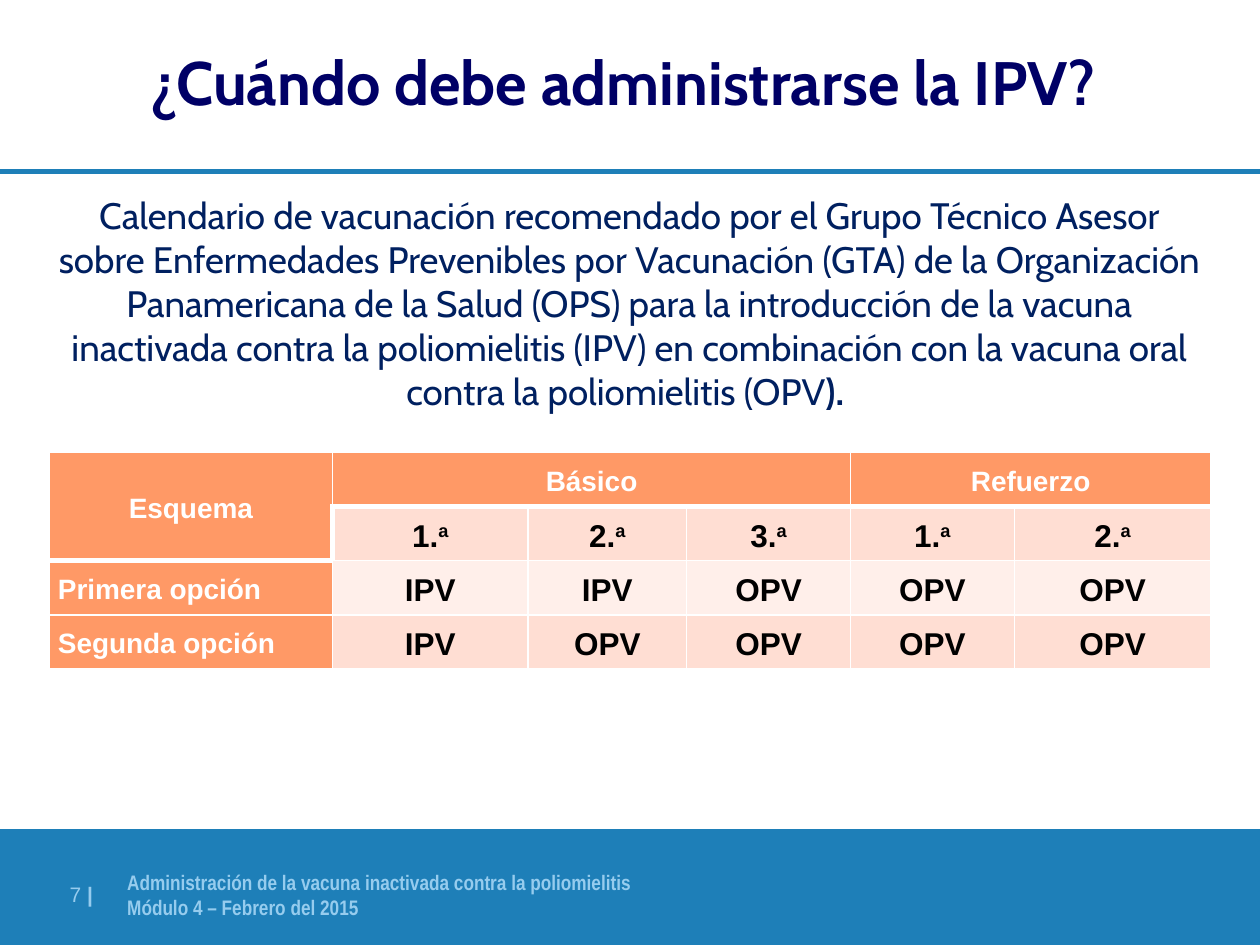
import pptx
import pptx.dml.color
import pptx.enum.shapes
import pptx.enum.text
import pptx.oxml
import pptx.oxml.ns
import pptx.util
from lxml import etree
from pptx.util import Inches

ALIGN = pptx.enum.text.PP_ALIGN
MIDDLE = pptx.enum.text.MSO_ANCHOR.MIDDLE
TOP = pptx.enum.text.MSO_ANCHOR.TOP
BLUE, PALE_BLUE, WHITE, BLACK = "1E7FB8", "96CCEE", "FFFFFF", "000000"
ORANGE, PEACH, LIGHT_PEACH = "FF9966", "FFDED3", "FFEFEA"
NAMESPACE = pptx.oxml.ns.nsdecls("a")


def color(value):
    return pptx.dml.color.RGBColor.from_string(value)


class SlideBuilder:
    """Holds the current slide and draws styled elements on it."""

    def __init__(self, slide):
        self.slide = slide

    def style(self, paragraph, size, font, value, bold=None, align=ALIGN.LEFT):
        paragraph.alignment = align
        paragraph.font.size = pptx.util.Pt(size)
        paragraph.font.name = font
        paragraph.font.color.rgb = color(value)
        if bold is not None:
            paragraph.font.bold = bold

    def rule(self, y, width):
        line = self.slide.shapes.add_connector(
            pptx.enum.shapes.MSO_CONNECTOR.STRAIGHT,
            0, Inches(y), Inches(10), Inches(y))
        line.line.color.rgb = color(BLUE)
        line.line.width = pptx.util.Pt(width)
        etree.SubElement(line._element.spPr, pptx.oxml.ns.qn("a:effectLst"))

    def band(self, *box):
        band = self.slide.shapes.add_shape(
            pptx.enum.shapes.MSO_SHAPE.RECTANGLE, *map(Inches, box))
        band.shadow.inherit = False
        band.fill.solid()
        band.fill.fore_color.rgb = color(BLUE)
        band.line.fill.background()

    def text(self, box, lines, inset=(0, 0), anchor=TOP, **style):
        """Add a text box; each line is a list of (text, bold) runs."""
        frame = self.slide.shapes.add_textbox(*map(Inches, box)).text_frame
        frame.word_wrap = True
        frame.vertical_anchor = anchor
        frame.margin_left = frame.margin_right = Inches(inset[0])
        frame.margin_top = frame.margin_bottom = Inches(inset[1])
        for index, runs in enumerate(lines):
            paragraph = frame.add_paragraph() if index else frame.paragraphs[0]
            self.style(paragraph, **style)
            for words, bold in runs:
                run = paragraph.add_run()
                run.text = words
                if bold is not None:
                    run.font.bold = bold
        return frame

    def glow_shadow(self, frame):
        """Put a soft blue shadow behind the letters."""
        for run in frame.paragraphs[0].runs:
            run._r.get_or_add_rPr().append(pptx.oxml.parse_xml(
                f'<a:effectLst {NAMESPACE}><a:outerShdw blurRad="50800" '
                f'dist="38100" dir="2700000"><a:srgbClr val="{PALE_BLUE}"/>'
                '</a:outerShdw></a:effectLst>'))

    def borders(self, cell, widths):
        """Draw white borders, with widths in the order left, right, top, bottom."""
        properties = cell._tc.get_or_add_tcPr()
        for position, (side, width) in enumerate(zip("LRTB", widths)):
            properties.insert(position, pptx.oxml.parse_xml(
                f'<a:ln{side} {NAMESPACE} w="{width * 12700}"><a:solidFill>'
                f'<a:srgbClr val="{WHITE}"/></a:solidFill></a:ln{side}>'))

    def cell(self, cell, words, fill, size, value, align, widths):
        """Fill a table cell; what follows ^ is raised."""
        cell.fill.solid()
        cell.fill.fore_color.rgb = color(fill)
        self.borders(cell, widths)
        cell.vertical_anchor = MIDDLE
        cell.margin_left = cell.margin_right = Inches(0.07)
        cell.margin_top = cell.margin_bottom = 0
        paragraph = cell.text_frame.paragraphs[0]
        paragraph.line_spacing = 1.15
        paragraph.space_before = paragraph.space_after = pptx.util.Pt(3)
        self.style(paragraph, size, "Arial", value, True, align)
        base, _, raised = words.partition("^")
        if base:
            paragraph.add_run().text = base
        if raised:
            ordinal = paragraph.add_run()
            ordinal.text = raised
            ordinal._r.get_or_add_rPr().set("baseline", "30000")

    def schedule(self, left, top, columns, row_height, rows, merges):
        table = self.slide.shapes.add_table(
            len(rows), len(columns), Inches(left), Inches(top),
            Inches(sum(columns)), Inches(row_height * len(rows))).table
        for column, width in zip(table.columns, columns):
            column.width = Inches(width)
        for r, row in enumerate(rows):
            table.rows[r].height = Inches(row_height)
            for c, words in enumerate(row):
                heading = r == 0 or c == 0
                fill = ORANGE if heading else LIGHT_PEACH if r == 2 else PEACH
                align = ALIGN.LEFT if c == 0 and r > 1 else ALIGN.CENTER
                thick_top = (r == 1 and c > 0) or (r == 2 and c == 0)
                thick_bottom = r == 0 or (r == 1 and c == 0)
                widths = (3 if (r, c) == (1, 1) else 1,
                          3 if (r, c) == (1, 0) else 1,
                          3 if thick_top else 1, 3 if thick_bottom else 1)
                self.cell(table.cell(r, c), words, fill, 16 if heading else 18,
                          WHITE if heading else BLACK, align, widths)
        for first, last in merges:
            table.cell(*first).merge(table.cell(*last))


def main():
    presentation = pptx.Presentation()
    presentation.slide_width, presentation.slide_height = Inches(10), Inches(7.5)
    builder = SlideBuilder(
        presentation.slides.add_slide(presentation.slide_layouts[6]))

    builder.rule(1.36, 3)
    builder.band(0, 6.58, 10, 0.92)
    builder.text(
        (1.01, 6.9, 5.4, 0.46),
        [[("Administración de la vacuna inactivada contra la poliomielitis", None)],
         [("Módulo 4 – Febrero del 2015", None)]],
        size=12, font="Arial Narrow", value=PALE_BLUE, bold=True)
    builder.text((0.39, 7, 0.51, 0.36), [[("7 ", None), ("|", True)]],
                 size=12, font="Arial", value=PALE_BLUE, align=ALIGN.CENTER)
    title = builder.text(
        (0, -0.03, 10, 1.35), [[("¿Cuándo debe administrarse la IPV? ", None)]],
        anchor=MIDDLE, size=35, font="Cabin", value="000066", bold=True,
        align=ALIGN.CENTER)
    builder.glow_shadow(title)

    builder.schedule(
        0.39, 3.59, [2.25, 1.55, 1.26, 1.3, 1.3, 1.56], 0.43,
        [["Esquema", "Básico", "", "", "Refuerzo", ""],
         ["", "1.^a", "2.^a", "3.^a", "1.^a", "2.^a"],
         ["Primera opción", "IPV", "IPV", "OPV", "OPV", "OPV"],
         ["Segunda opción", "IPV", "OPV", "OPV", "OPV", "OPV"]],
        merges=[((0, 0), (1, 0)), ((0, 1), (0, 3)), ((0, 4), (0, 5))])

    builder.text(
        (0.33, 1.47, 9.33, 1.87),
        [[("Calendario de vacunación recomendado por el Grupo Técnico Asesor "
           "sobre Enfermedades Prevenibles por Vacunación (GTA) de la "
           "Organización Panamericana de la Salud (OPS) para la introducción "
           "de la vacuna inactivada contra la poliomielitis (IPV) en "
           "combinación con la vacuna oral contra la poliomielitis (OPV", None),
          ("). ", True)]],
        inset=(0.1, 0.05), anchor=MIDDLE, size=21, font="Cabin",
        value="002060", align=ALIGN.CENTER)

    presentation.save("out.pptx")


if __name__ == "__main__":
    main()
